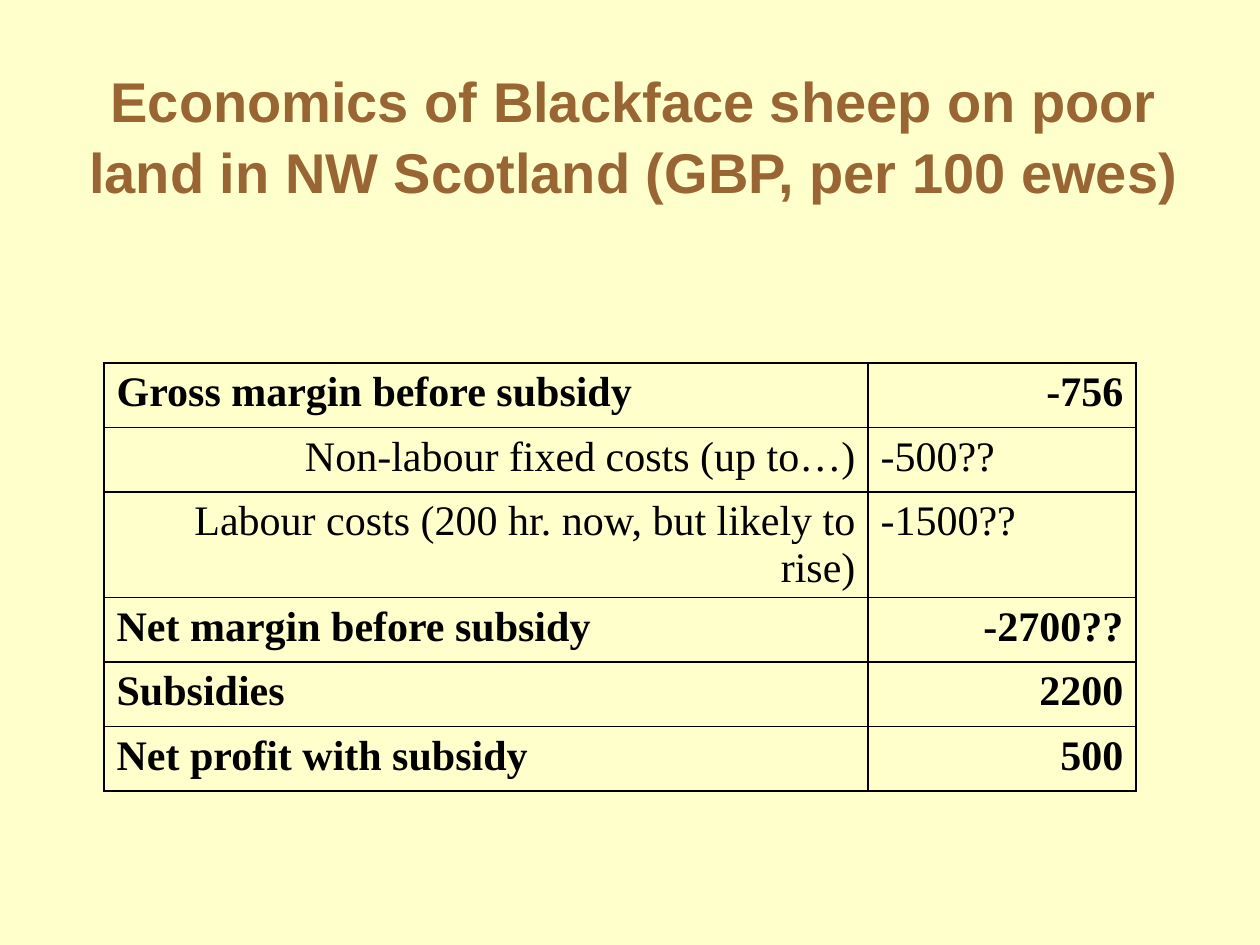
from dataclasses import dataclass

import pptx
import pptx.dml.color
import pptx.enum.text
import pptx.oxml
import pptx.oxml.ns
import pptx.util

PX_PER_INCH = 126
ALIGN = pptx.enum.text.PP_ALIGN


@dataclass(frozen=True)
class Theme:
    background: str = "FFFFCC"
    title_colour: str = "996633"
    ink: str = "000000"
    title_font: str = "Arial"
    table_font: str = "Times New Roman"
    title_size: int = 32
    table_size: int = 24
    title_spacing: float = 1.05
    border_width: int = 1


THEME = Theme()

TITLE = "Economics of Blackface sheep on poor land in NW Scotland (GBP, per 100 ewes)"

# Label, amount, and whether the row is a main result rather than a cost detail
BUDGET = [
    ("Gross margin before subsidy", "-756", True),
    ("Non-labour fixed costs (up to…)", "-500??", False),
    ("Labour costs (200 hr. now, but likely to rise)", "-1500??", False),
    ("Net margin before subsidy", "-2700??", True),
    ("Subsidies", "2200", True),
    ("Net profit with subsidy", "500", True),
]
COLUMN_WIDTHS = (764, 268)
ROW_HEIGHT = 64.5


def px(length):
    return pptx.util.Emu(round(length * 914400 / PX_PER_INCH))


def rgb(colour):
    return pptx.dml.color.RGBColor.from_string(colour)


def add_run(paragraph, text, font_name, size, colour, bold):
    run = paragraph.add_run()
    run.text = text
    run.font.name = font_name
    run.font.size = pptx.util.Pt(size)
    run.font.color.rgb = rgb(colour)
    run.font.bold = bold


def set_title(slide):
    title = slide.shapes.title
    title.left, title.top, title.width, title.height = map(px, (54, 55, 1160, 158))
    frame = title.text_frame
    frame.word_wrap = True
    frame.auto_size = pptx.enum.text.MSO_AUTO_SIZE.NONE
    frame.vertical_anchor = pptx.enum.text.MSO_ANCHOR.MIDDLE
    paragraph = frame.paragraphs[0]
    paragraph.alignment = ALIGN.CENTER
    paragraph.line_spacing = THEME.title_spacing
    add_run(paragraph, TITLE, THEME.title_font, THEME.title_size,
            THEME.title_colour, True)


def set_borders(cell):
    properties = cell._tc.get_or_add_tcPr()
    width = pptx.util.Pt(THEME.border_width)
    for position, side in enumerate(("lnL", "lnR", "lnT", "lnB")):
        border = pptx.oxml.parse_xml(
            f'<a:{side} {pptx.oxml.ns.nsdecls("a")} w="{width}">'
            f'<a:solidFill><a:srgbClr val="{THEME.ink}"/></a:solidFill>'
            f'</a:{side}>'
        )
        properties.insert(position, border)


def fill_cell(cell, text, alignment, bold):
    cell.fill.background()
    set_borders(cell)
    paragraph = cell.text_frame.paragraphs[0]
    paragraph.alignment = alignment
    add_run(paragraph, text, THEME.table_font, THEME.table_size, THEME.ink, bold)


def add_budget_table(slide):
    """Main results spread to the outer edges; cost details meet at the divider."""
    table = slide.shapes.add_table(
        len(BUDGET), len(COLUMN_WIDTHS), px(104), px(363),
        px(sum(COLUMN_WIDTHS)), px(ROW_HEIGHT * len(BUDGET)),
    ).table
    table.first_row = False
    table.horz_banding = False
    for column, width in zip(table.columns, COLUMN_WIDTHS):
        column.width = px(width)
    for row, (label, amount, is_main) in zip(table.rows, BUDGET):
        row.height = px(ROW_HEIGHT)
        alignments = (ALIGN.LEFT, ALIGN.RIGHT) if is_main else (ALIGN.RIGHT, ALIGN.LEFT)
        for cell, text, alignment in zip(row.cells, (label, amount), alignments):
            fill_cell(cell, text, alignment, is_main)


def main():
    presentation = pptx.Presentation()
    presentation.slide_width = px(1260)
    presentation.slide_height = px(945)
    title_only = presentation.slide_layouts[5]
    slide = presentation.slides.add_slide(title_only)
    slide.background.fill.solid()
    slide.background.fill.fore_color.rgb = rgb(THEME.background)
    set_title(slide)
    add_budget_table(slide)
    presentation.save("out.pptx")


if __name__ == "__main__":
    main()
